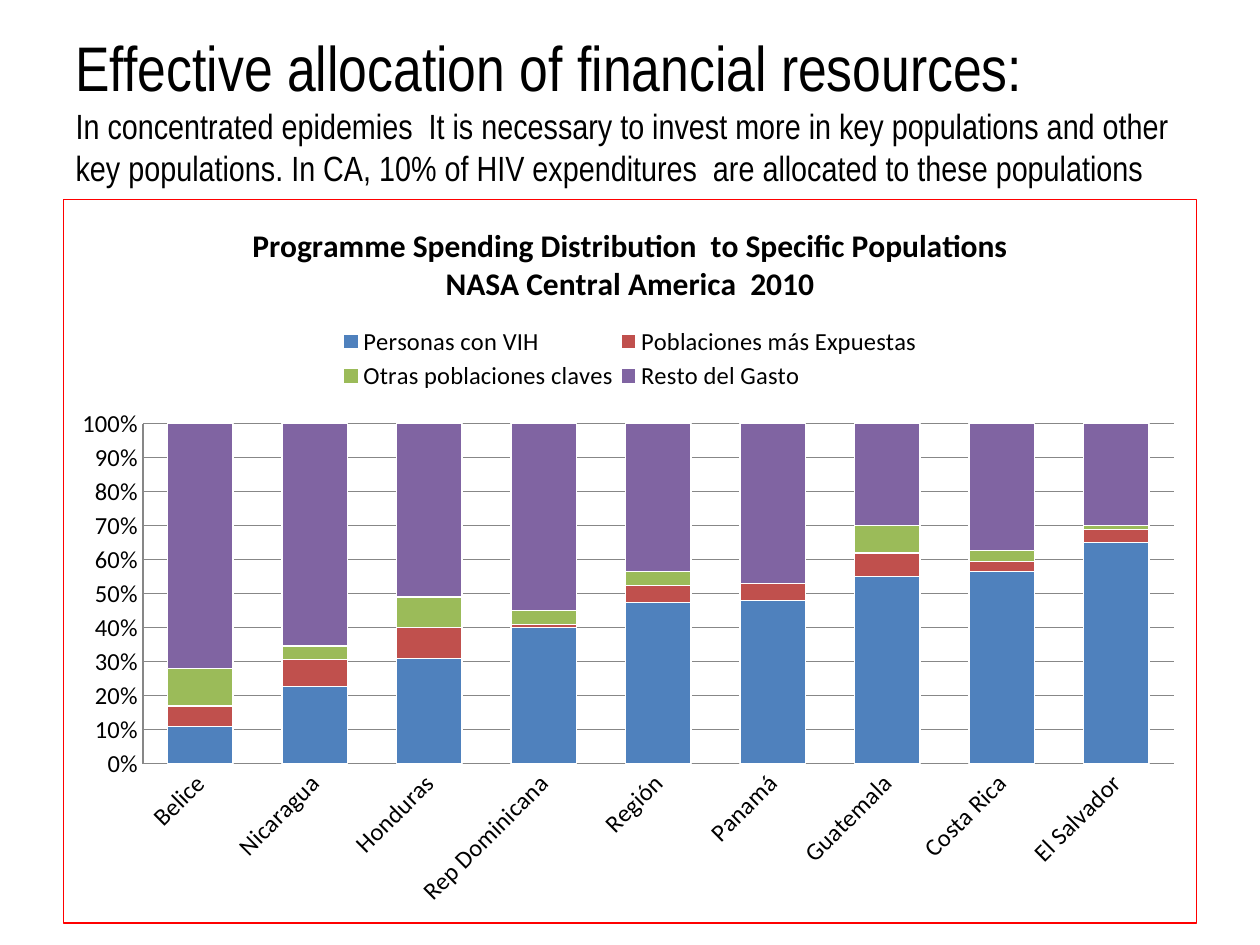
import pptx
import pptx.chart.data
import pptx.dml.color
import pptx.enum.chart
import pptx.enum.text
import pptx.oxml
import pptx.oxml.ns
import pptx.util

HEADING = [
    ("Effective allocation of financial resources:", 36),
    ("In concentrated epidemies  It is necessary to invest more in key populations and other "
     "key populations. In CA, 10% of HIV expenditures  are allocated to these populations", 20),
]
CHART_TITLE = ["Programme Spending Distribution  to Specific Populations", "NASA Central America  2010"]
COUNTRIES = ["Belice", "Nicaragua", "Honduras", "Rep Dominicana", "Región",
             "Panamá", "Guatemala", "Costa Rica", "El Salvador"]
SPENDING = [
    ("Personas con VIH", "blue", [11, 23, 31, 40, 47, 48, 55, 56, 65]),
    ("Poblaciones más Expuestas", "red", [6, 8, 9, 1, 5, 5, 7, 3, 4]),
    ("Otras poblaciones claves", "green", [11, 4, 9, 4, 4, 0, 8, 3, 1]),
    ("Resto del Gasto", "purple", [72, 66, 51, 55, 43, 47, 30, 37, 30]),
]
COLOURS = {"blue": "4F81BD", "red": "C0504D", "green": "9BBB59", "purple": "8064A2",
           "text": "000000", "grid": "878787", "gap": "FFFFFF", "border": "FF0000"}
MARGIN, WIDTH = 0.5, 9
TITLE_TOP, TITLE_HEIGHT = 0.17, 1.38
CHART_TOP, CHART_HEIGHT = 1.58, 5.75
LEGEND_AREA = (0.24, 0.17, 0.52, 0.1)
PLOT_AREA = (0.07, 0.31, 0.91, 0.47)
NAMESPACES = pptx.oxml.ns.nsdecls("c", "a")


def colour(name):
    return pptx.dml.color.RGBColor.from_string(COLOURS[name])


def style_font(font, size, name, bold=False):
    font.size = pptx.util.Pt(size)
    font.name = name
    font.bold = bold
    font.color.rgb = colour("text")


def style_line(line, name, width=0.75):
    line.color.rgb = colour(name)
    line.width = pptx.util.Pt(width)


def fill_lines(frame, lines, font_name, bold=False):
    frame.text = "\n".join(text for text, size in lines)
    for para, (text, size) in zip(frame.paragraphs, lines):
        for span in para.runs:
            style_font(span.font, size, font_name, bold)


def manual_layout(area, inner=False):
    target = '<c:layoutTarget val="inner"/>' if inner else ""
    modes = "".join(f'<c:{side}Mode val="edge"/>' for side in "xy")
    sizes = "".join(f'<c:{side} val="{share}"/>' for side, share in zip("xywh", area))
    return pptx.oxml.parse_xml(
        f"<c:layout {NAMESPACES}><c:manualLayout>{target}{modes}{sizes}</c:manualLayout></c:layout>")


def add_title(page):
    title = page.shapes.title
    title.left, title.top, title.width, title.height = map(
        pptx.util.Inches, (MARGIN, TITLE_TOP, WIDTH, TITLE_HEIGHT))
    frame = title.text_frame
    frame.word_wrap = True
    frame.auto_size = pptx.enum.text.MSO_AUTO_SIZE.NONE
    frame.vertical_anchor = pptx.enum.text.MSO_ANCHOR.MIDDLE
    fill_lines(frame, HEADING, "Arial Narrow")
    for para in frame.paragraphs:
        para.alignment = pptx.enum.text.PP_ALIGN.LEFT


def add_spending_chart(page):
    data = pptx.chart.data.CategoryChartData()
    data.categories = COUNTRIES
    for name, tone, values in SPENDING:
        data.add_series(name, values)
    chart = page.shapes.add_chart(
        pptx.enum.chart.XL_CHART_TYPE.COLUMN_STACKED_100,
        *map(pptx.util.Inches, (MARGIN, CHART_TOP, WIDTH, CHART_HEIGHT)), data).chart
    style_font(chart.font, 10, "Calibri")
    chart.has_title = True
    fill_lines(chart.chart_title.text_frame, [(text, 18) for text in CHART_TITLE], "Calibri", True)
    chart.chart_title.include_in_layout = False

    plot = chart.plots[0]
    plot.gap_width, plot.overlap, plot.vary_by_categories = 75, 100, False
    for series, (name, tone, values) in zip(plot.series, SPENDING):
        series.format.fill.solid()
        series.format.fill.fore_color.rgb = colour(tone)
        style_line(series.format.line, "gap")

    chart.has_legend = True
    chart.legend.position = pptx.enum.chart.XL_LEGEND_POSITION.TOP
    chart.legend.include_in_layout = False
    style_font(chart.legend.font, 14, "Calibri")

    for axis in (chart.category_axis, chart.value_axis):
        axis.major_tick_mark = axis.minor_tick_mark = pptx.enum.chart.XL_TICK_MARK.NONE
        style_font(axis.tick_labels.font, 14, "Calibri")
        style_line(axis.format.line, "grid")
    scale = chart.value_axis
    scale.minimum_scale, scale.maximum_scale, scale.major_unit = 0, 1, 0.1
    scale.has_major_gridlines = True
    style_line(scale.major_gridlines.format.line, "grid")
    scale.tick_labels.number_format = "0%"
    scale.tick_labels.number_format_is_linked = False
    arrange_chart(chart.element)


def arrange_chart(space):
    space.xpath(".//c:catAx/c:txPr/a:bodyPr")[0].set("rot", "-2700000")
    for old in space.xpath(".//c:plotArea/c:layout | .//c:legend/c:layout"):
        old.getparent().remove(old)
    space.xpath(".//c:plotArea")[0].insert(0, manual_layout(PLOT_AREA, True))
    space.xpath(".//c:legend/c:legendPos")[0].addnext(manual_layout(LEGEND_AREA))
    space.xpath("./c:chart")[0].addnext(pptx.oxml.parse_xml(
        f'<c:spPr {NAMESPACES}><a:noFill/><a:ln w="9525"><a:solidFill>'
        f'<a:srgbClr val="{COLOURS["border"]}"/></a:solidFill></a:ln></c:spPr>'))


def main():
    deck = pptx.Presentation()
    deck.slide_width, deck.slide_height = pptx.util.Inches(10), pptx.util.Inches(7.5)
    page = deck.slides.add_slide(deck.slide_layouts[5])
    add_title(page)
    add_spending_chart(page)
    deck.save("out.pptx")


if __name__ == "__main__":
    main()
